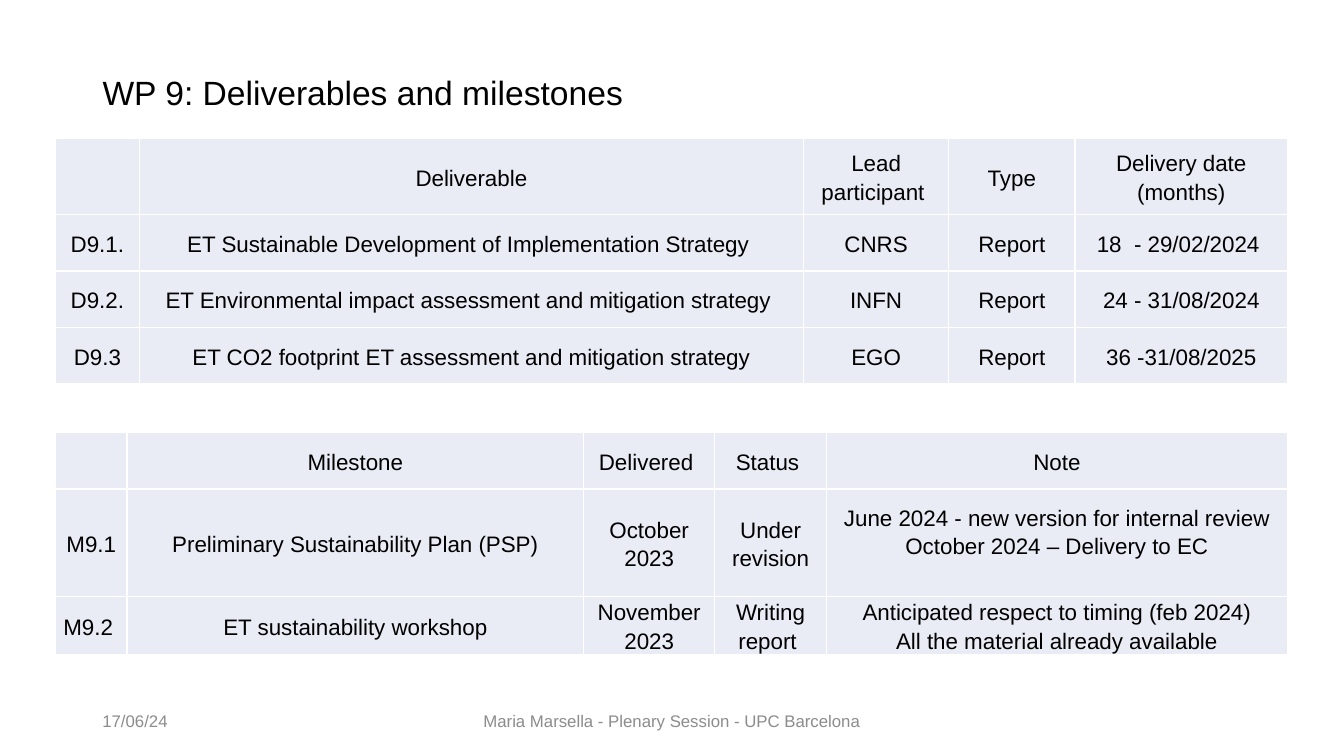
from dataclasses import dataclass, field

from lxml import etree
from pptx import Presentation
from pptx.dml.color import RGBColor
from pptx.enum.text import MSO_ANCHOR, MSO_AUTO_SIZE, PP_ALIGN
from pptx.oxml.ns import qn
from pptx.slide import Slide
from pptx.table import _Cell
from pptx.text.text import TextFrame
from pptx.util import Cm, Pt

MIDDLE = MSO_ANCHOR.MIDDLE
NO_AUTOFIT = MSO_AUTO_SIZE.NONE
LEFT, CENTER = PP_ALIGN.LEFT, PP_ALIGN.CENTER
FONT = "Arial"
BLACK, WHITE, GREY, CELL_FILL = "000000", "FFFFFF", "8C8C8C", "E9EBF5"
TITLE_ONLY_LAYOUT = 5
TABLE_LEFT = 1.4


@dataclass
class TableContent:
    """A table with lengths in centimetres and line breaks between paragraphs."""

    top: float
    widths: list[float]
    heights: list[float]
    rows: list[list[str]]
    bottom_margins: dict[tuple[int, int], float] = field(default_factory=dict)


@dataclass
class FooterText:
    """A line of text at the foot of the slide."""

    text: str
    left: float
    width: float
    alignment: PP_ALIGN


DELIVERABLES = TableContent(
    top=3.48,
    widths=[2.11, 16.74, 3.66, 3.18, 5.36],
    heights=[1.93, 1.42, 1.42, 1.42],
    rows=[
        ["", "Deliverable", "Lead participant ", "Type", "Delivery date\n(months)"],
        ["D9.1.", "ET Sustainable Development of Implementation Strategy ",
         "CNRS", "Report", "18  - 29/02/2024 "],
        ["D9.2.", "ET Environmental impact assessment and mitigation strategy ",
         "INFN", "Report", "24 - 31/08/2024"],
        ["D9.3", "ET CO2 footprint ET assessment and mitigation strategy",
         "EGO", "Report", "36 -31/08/2025"],
    ],
)
MILESTONES = TableContent(
    top=10.9,
    widths=[1.8, 11.51, 3.3, 2.82, 11.61],
    heights=[1.42, 2.72, 1.35],
    rows=[
        ["", "Milestone", "Delivered ", "Status ", "Note"],
        ["M9.1", "Preliminary Sustainability Plan (PSP)", "October 2023", "Under revision",
         "June 2024 - new version for internal review\nOctober 2024 – Delivery to EC"],
        ["M9.2 ", "ET sustainability workshop", "November 2023", "Writing report ",
         "Anticipated respect to timing (feb 2024)\nAll the material already available"],
    ],
    bottom_margins={(1, 4): 0.6},
)
FOOTERS = [
    FooterText("17/06/24", 2.33, 7.62, LEFT),
    FooterText("Maria Marsella - Plenary Session - UPC Barcelona", 11.22, 11.43, CENTER),
]


def color(value: str) -> RGBColor:
    """Turn a hex string into a colour."""
    return RGBColor.from_string(value)


def write_text(frame: TextFrame, text: str, size: float, text_color: str,
               alignment: PP_ALIGN, line_spacing: float = 1.0) -> None:
    """Write one formatted paragraph for each line of the text."""
    for index, line in enumerate(text.split("\n")):
        paragraph = frame.add_paragraph() if index else frame.paragraphs[0]
        paragraph.alignment = alignment
        paragraph.line_spacing = line_spacing
        run = paragraph.add_run()
        run.text = line
        run.font.name = FONT
        run.font.size = Pt(size)
        run.font.color.rgb = color(text_color)


def add_borders(cell: _Cell) -> None:
    """Draw a white one-point line on each side of a cell."""
    properties = cell._tc.get_or_add_tcPr()
    for side in ("a:lnL", "a:lnR", "a:lnT", "a:lnB"):
        line = etree.SubElement(properties, qn(side), w=str(Pt(1)))
        fill = etree.SubElement(line, qn("a:solidFill"))
        etree.SubElement(fill, qn("a:srgbClr"), val=WHITE)


def add_title(slide: Slide, text: str) -> None:
    """Place and format the slide title."""
    title = slide.shapes.title
    title.left, title.top, title.width, title.height = Cm(2.33), Cm(1.01), Cm(29.21), Cm(3.68)
    frame = title.text_frame
    frame.auto_size = NO_AUTOFIT
    frame.vertical_anchor = MIDDLE
    frame.margin_bottom = Cm(1.05)
    write_text(frame, text, 24, BLACK, LEFT, 0.9)


def add_content_table(slide: Slide, content: TableContent) -> None:
    """Draw a table with evenly filled cells."""
    table = slide.shapes.add_table(
        len(content.heights), len(content.widths), Cm(TABLE_LEFT), Cm(content.top),
        Cm(sum(content.widths)), Cm(sum(content.heights))).table
    table.first_row = table.horz_banding = False
    for column, width in zip(table.columns, content.widths):
        column.width = Cm(width)
    for row_index, (height, texts) in enumerate(zip(content.heights, content.rows)):
        table.rows[row_index].height = Cm(height)
        for column_index, text in enumerate(texts):
            cell = table.cell(row_index, column_index)
            add_borders(cell)
            cell.fill.solid()
            cell.fill.fore_color.rgb = color(CELL_FILL)
            cell.vertical_anchor = MIDDLE
            cell.margin_left = cell.margin_right = Cm(0.18)
            cell.margin_top = 0
            cell.margin_bottom = Cm(content.bottom_margins.get((row_index, column_index), 0))
            if text:
                write_text(cell.text_frame, text, 16, BLACK, CENTER, 1.15)


def add_footer(slide: Slide, footer: FooterText) -> None:
    """Add a grey text box at the foot of the slide."""
    shape = slide.shapes.add_textbox(Cm(footer.left), Cm(17.65), Cm(footer.width), Cm(1.01))
    frame = shape.text_frame
    frame.word_wrap = True
    frame.vertical_anchor = MIDDLE
    write_text(frame, footer.text, 12, GREY, footer.alignment)


def main() -> None:
    """Build the slide and save the presentation."""
    presentation = Presentation()
    presentation.slide_width, presentation.slide_height = Cm(33.87), Cm(19.05)
    slide = presentation.slides.add_slide(presentation.slide_layouts[TITLE_ONLY_LAYOUT])
    add_title(slide, "WP 9: Deliverables and milestones")
    for content in (DELIVERABLES, MILESTONES):
        add_content_table(slide, content)
    for footer in FOOTERS:
        add_footer(slide, footer)
    presentation.save("out.pptx")


if __name__ == "__main__":
    main()
